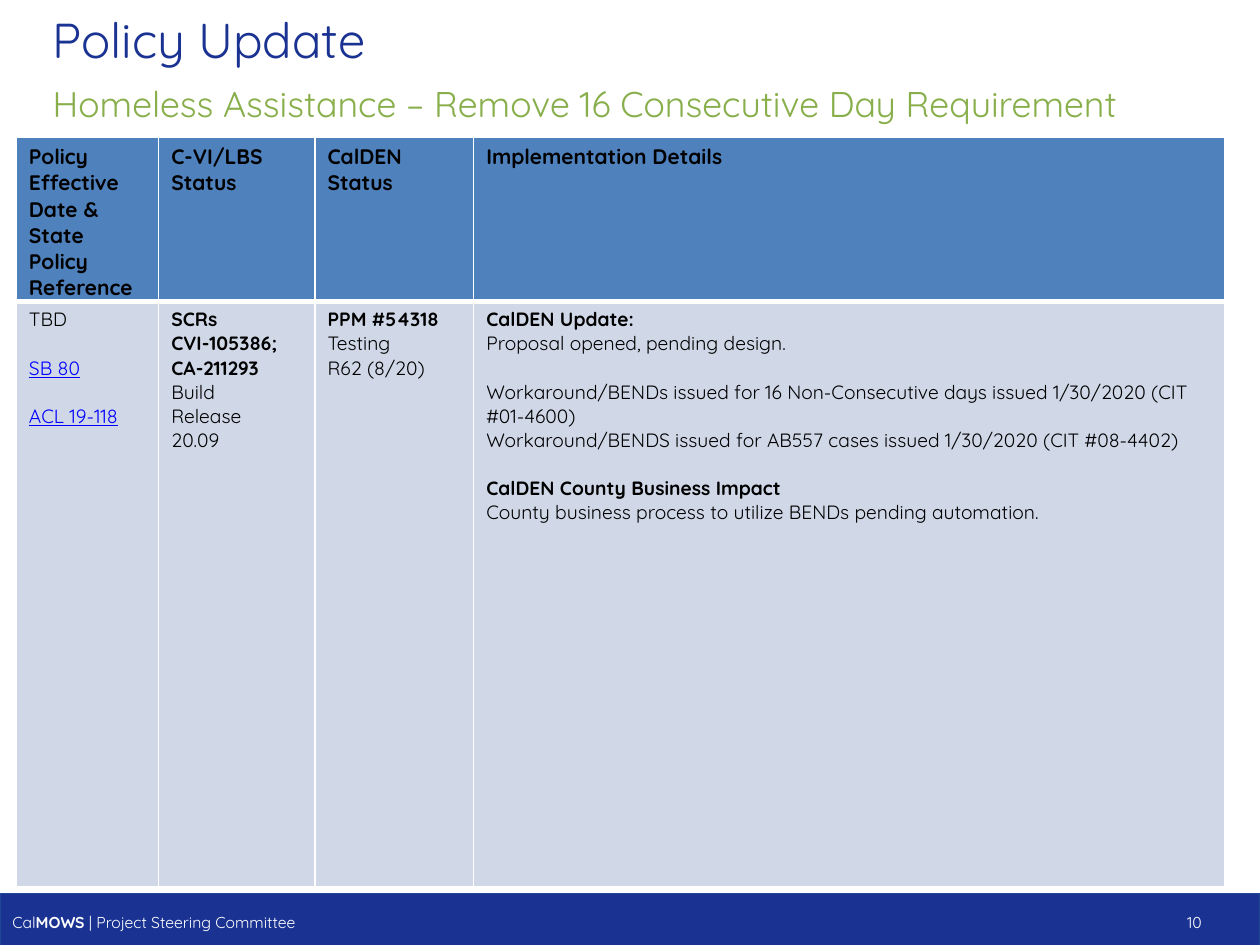
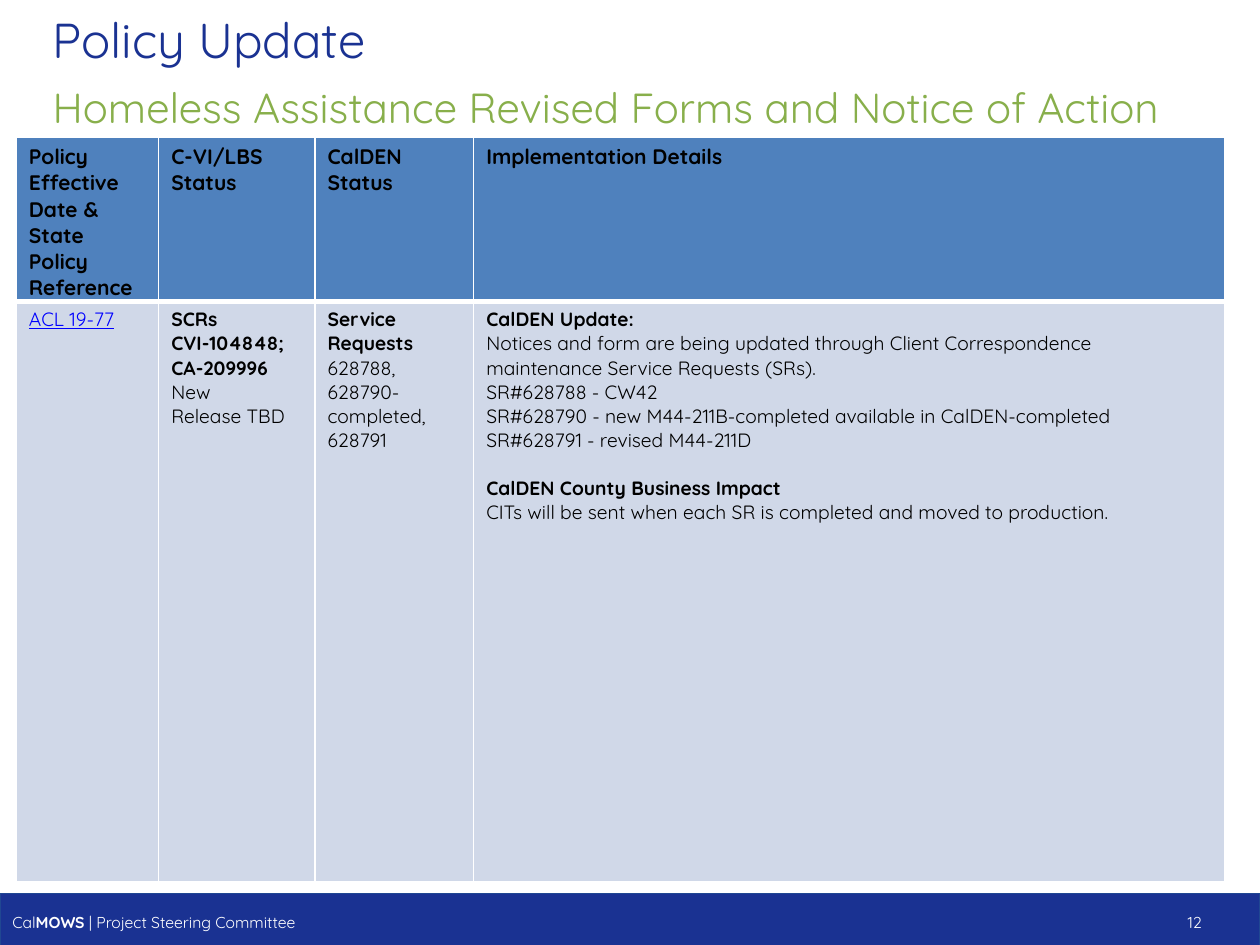
from lxml import etree
from pptx import Presentation
from pptx import util as u
from pptx.dml.color import RGBColor
from pptx.enum import shapes, text
from pptx.oxml.ns import qn

W, H = 10, 7.5
FONT = "Quicksand"
COLORS = {
    "navy": "1A3292", "navy_line": "204792", "green": "88AF4B",
    "header": "4F81BD", "body": "D0D8E8", "link": "0000FF",
    "black": "000000", "white": "FFFFFF",
}
BODY_SIZE = 11
GAP = BODY_SIZE * 1.25  # one line of body text

# Table grid
TABLE_LEFT, TABLE_TOP = 0.13, 1.09
COLUMNS = [1.13, 1.24, 1.26, 5.96]
HEADER_HEIGHT = 1.29
HEADINGS = ["Policy Effective Date & State Policy Reference",
            "C-VI/LBS Status", "CalDEN Status", "Implementation Details"]

# Paragraph formats used in the table body
PLAIN = {"size": BODY_SIZE}
BOLD = {"size": BODY_SIZE, "bold": True}
LINK = {"size": BODY_SIZE, "color": "link", "underline": True}

UPDATES = [
    {
        "page": 10,
        "subtitle": "Homeless Assistance – Remove 16 Consecutive Day Requirement",
        "subtitle_size": 20.4,
        "body_height": 4.65,
        "cells": [
            [("TBD", PLAIN), ("SB 80", LINK, GAP), ("ACL 19-118", LINK, GAP)],
            [("SCRs CVI-105386; CA-211293", BOLD), ("Build", PLAIN),
             ("Release", PLAIN), ("20.09", PLAIN)],
            [("PPM #54318", BOLD), ("Testing", PLAIN), ("R62 (8/20)", PLAIN)],
            [("CalDEN Update:", BOLD),
             ("Proposal opened, pending design.", PLAIN),
             ("Workaround/BENDs issued for 16 Non-Consecutive days issued "
              "1/30/2020 (CIT #01-4600)", PLAIN, GAP),
             ("Workaround/BENDS issued for AB557 cases issued 1/30/2020 "
              "(CIT #08-4402)", PLAIN),
             ("CalDEN County Business Impact", BOLD, GAP),
             ("County business process to utilize BENDs pending automation.",
              PLAIN)],
        ],
    },
    {
        "page": 12,
        "subtitle": "Homeless Assistance Revised Forms and Notice of Action",
        "subtitle_size": 24,
        "body_height": 4.61,
        "cells": [
            [("ACL 19-77", LINK)],
            [("SCRs CVI-104848; CA-209996", BOLD), ("New", PLAIN),
             ("Release TBD", PLAIN)],
            [("Service Requests", BOLD),
             ("628788, 628790-completed, 628791", PLAIN)],
            [("CalDEN Update:", BOLD),
             ("Notices and form are being updated through Client "
              "Correspondence maintenance Service Requests (SRs).", PLAIN),
             ("SR#628788 - CW42", PLAIN),
             ("SR#628790 - new M44-211B-completed available in "
              "CalDEN-completed", PLAIN),
             ("SR#628791 - revised M44-211D", PLAIN),
             ("CalDEN County Business Impact", BOLD, GAP),
             ("CITs will be sent when each SR is completed and moved to "
              "production.", PLAIN)],
        ],
    },
]


def rgb(name):
    return RGBColor.from_string(COLORS[name])


def add_run(p, content, size=12, color="black", bold=False, underline=False):
    r = p.add_run()
    r.text = content
    r.font.name = FONT
    r.font.size = u.Pt(size)
    r.font.bold = bold
    r.font.underline = underline
    r.font.color.rgb = rgb(color)


def add_heading(slide, content, top, height, anchor, **style):
    box = slide.shapes.add_textbox(u.Inches(0.32), u.Inches(top),
                                   u.Inches(9.42), u.Inches(height))
    tf = box.text_frame
    tf.word_wrap = True
    tf.vertical_anchor = anchor
    add_run(tf.paragraphs[0], content, **style)


def add_footer(slide, page):
    sp = slide.shapes.add_shape(shapes.MSO_SHAPE.RECTANGLE, 0, u.Inches(7.09),
                                u.Inches(W), u.Inches(0.45))
    sp.shadow.inherit = False
    sp.fill.solid()
    sp.fill.fore_color.rgb = rgb("navy")
    sp.line.color.rgb = rgb("navy_line")
    sp.line.width = u.Pt(0.75)
    tf = sp.text_frame
    tf.vertical_anchor = text.MSO_ANCHOR.MIDDLE
    p = tf.paragraphs[0]
    p.alignment = text.PP_ALIGN.LEFT
    # Right tab stop for the page number
    tabs = etree.SubElement(p._p.get_or_add_pPr(), qn("a:tabLst"))
    etree.SubElement(tabs, qn("a:tab"), pos=str(u.Inches(9.44)), algn="r")
    for content, bold in [("Cal", False), ("MOWS", True),
                          (f" | Project Steering Committee\t{page}", False)]:
        add_run(p, content, size=9, color="white", bold=bold)


def set_borders(cell, bottom=1):
    tc_pr = cell._tc.get_or_add_tcPr()
    for i, (side, width) in enumerate(zip("LRTB", (1, 1, 1, bottom))):
        ln = etree.Element(qn(f"a:ln{side}"), w=str(u.Pt(width)))
        fill = etree.SubElement(ln, qn("a:solidFill"))
        etree.SubElement(fill, qn("a:srgbClr"), val=COLORS["white"])
        tc_pr.insert(i, ln)


def fill_cell(cell, paragraphs, fill, bottom=1):
    cell.fill.solid()
    cell.fill.fore_color.rgb = rgb(fill)
    set_borders(cell, bottom)
    tf = cell.text_frame
    for i, (content, style, *gap) in enumerate(paragraphs):
        p = tf.add_paragraph() if i else tf.paragraphs[0]
        if gap:
            p.space_before = u.Pt(gap[0])
        add_run(p, content, **style)


def add_status_table(slide, cells, body_height):
    frame = slide.shapes.add_table(
        2, len(COLUMNS), u.Inches(TABLE_LEFT), u.Inches(TABLE_TOP),
        u.Inches(sum(COLUMNS)), u.Inches(HEADER_HEIGHT + body_height))
    table = frame.table
    table.horz_banding = False
    table.rows[0].height = u.Inches(HEADER_HEIGHT)
    table.rows[1].height = u.Inches(body_height)
    for col, width in enumerate(COLUMNS):
        table.columns[col].width = u.Inches(width)
        fill_cell(table.cell(0, col), [(HEADINGS[col], {"bold": True})],
                  "header", bottom=3)
        fill_cell(table.cell(1, col), cells[col], "body")


def add_update(prs, update):
    slide = prs.slides.add_slide(prs.slide_layouts[6])
    add_footer(slide, update["page"])
    add_heading(slide, "Policy Update", 0.01, 0.59, text.MSO_ANCHOR.MIDDLE,
                size=28, color="navy")
    add_heading(slide, update["subtitle"], 0.6, 0.56, text.MSO_ANCHOR.TOP,
                size=update["subtitle_size"], color="green")
    add_status_table(slide, update["cells"], update["body_height"])


def main():
    prs = Presentation()
    prs.slide_width, prs.slide_height = u.Inches(W), u.Inches(H)
    for update in UPDATES:
        add_update(prs, update)
    prs.save("out.pptx")


if __name__ == "__main__":
    main()
